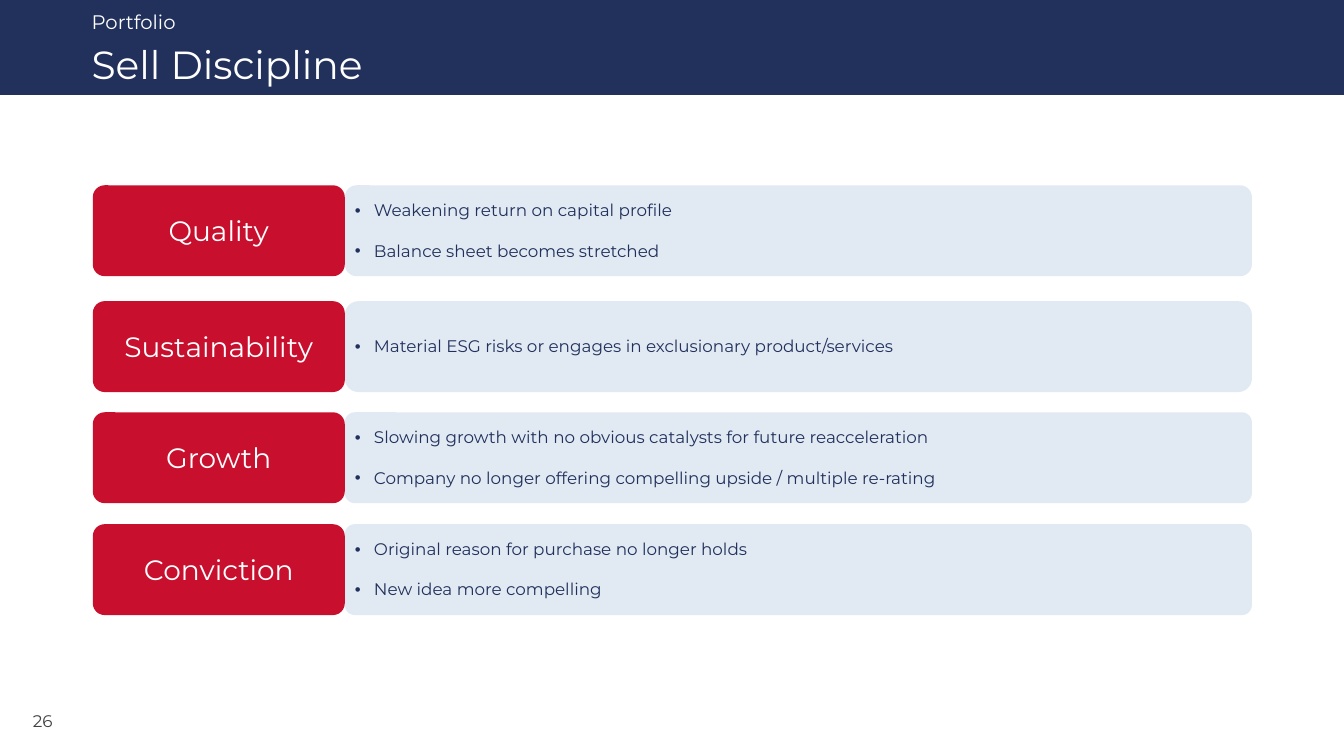
from dataclasses import dataclass

from lxml import etree
from pptx import Presentation
from pptx.dml.color import RGBColor
from pptx.enum import shapes, text
from pptx.oxml import ns
from pptx.slide import Slide
from pptx.shapes.autoshape import Shape
from pptx.util import Cm, Pt

FONT = "Montserrat"
NAVY, RED, PALE_BLUE, WHITE, GREY = "21315C", "C8102E", "9DB9D5", "FFFFFF", "414141"
NO_STYLE_NO_GRID = "{2D5ABB26-0587-4C30-8999-92F81FD0307C}"

# Lengths in centimetres
SLIDE_WIDTH, SLIDE_HEIGHT = 33.87, 19.05
HEADING_LEFT, HEADING_WIDTH = 2.31, 29.87
LABEL_LEFT, LABEL_WIDTH = 2.34, 6.35
PANEL_LEFT, PANEL_WIDTH = 8.69, 22.86
BAND_HEIGHT = 2.29
ROW_HEIGHT = 1.02
BULLET_INDENT = 0.48


@dataclass
class Criterion:
    name: str
    top: float
    table_width: float
    panel_rounding: float
    triggers: list[str]


CRITERIA = [
    Criterion("Quality", 4.67, 14.38, 0.13,
              ["Weakening return on capital profile", "Balance sheet becomes stretched"]),
    Criterion("Sustainability", 7.59, 18.49, 0.15,
              ["Material ESG risks or engages in exclusionary product/services"]),
    Criterion("Growth", 10.39, 18.49, 0.11,
              ["Slowing growth with no obvious catalysts for future reacceleration",
               "Company no longer offering compelling upside / multiple re-rating"]),
    Criterion("Conviction", 13.21, 15.29, 0.11,
              ["Original reason for purchase no longer holds", "New idea more compelling"]),
]


def color(value: str) -> RGBColor:
    return RGBColor.from_string(value)


def format_paragraph(paragraph, size: float, font_color: str, alignment=text.PP_ALIGN.LEFT) -> None:
    paragraph.alignment = alignment
    paragraph.font.name = FONT
    paragraph.font.size = Pt(size)
    paragraph.font.color.rgb = color(font_color)


def add_block(slide: Slide, kind, left: float, top: float, width: float, height: float,
              fill: str) -> Shape:
    block = slide.shapes.add_shape(kind, Cm(left), Cm(top), Cm(width), Cm(height))
    block.shadow.inherit = False
    block.fill.solid()
    block.fill.fore_color.rgb = color(fill)
    block.line.fill.background()
    return block


def set_opacity(shape: Shape, percent: int) -> None:
    fill_color = shape.element.spPr.find(ns.qn("a:solidFill"))[0]
    etree.SubElement(fill_color, ns.qn("a:alpha"), val=str(percent * 1000))


def format_heading(shape: Shape, words: str, size: float, anchor) -> None:
    frame = shape.text_frame
    frame.text = words
    frame.word_wrap = True
    frame.auto_size = text.MSO_AUTO_SIZE.NONE
    frame.vertical_anchor = anchor
    frame.margin_left = frame.margin_top = frame.margin_right = frame.margin_bottom = 0
    format_paragraph(frame.paragraphs[0], size, WHITE)


def add_bullet(paragraph) -> None:
    properties = paragraph._p.get_or_add_pPr()
    properties.set("marL", str(Cm(BULLET_INDENT)))
    properties.set("indent", str(-Cm(BULLET_INDENT)))
    etree.SubElement(properties, ns.qn("a:buFont"), typeface="Arial")
    etree.SubElement(properties, ns.qn("a:buChar"), char="•")


def add_header(slide: Slide) -> None:
    title = slide.shapes.title
    banner = add_block(slide, shapes.MSO_SHAPE.RECTANGLE, 0, 0, SLIDE_WIDTH, 2.39, NAVY)
    title.element.addprevious(banner.element)
    title.left, title.top = Cm(HEADING_LEFT), Cm(0.84)
    title.width, title.height = Cm(HEADING_WIDTH), Cm(1.55)
    format_heading(title, "Sell Discipline", 28, text.MSO_ANCHOR.MIDDLE)
    section = slide.shapes.add_textbox(Cm(HEADING_LEFT), Cm(0.23), Cm(HEADING_WIDTH), Cm(0.61))
    format_heading(section, "Portfolio", 14, text.MSO_ANCHOR.BOTTOM)


def add_trigger_table(slide: Slide, criterion: Criterion) -> None:
    count = len(criterion.triggers)
    height = count * ROW_HEIGHT
    top = criterion.top + (BAND_HEIGHT - height) / 2
    graphic_frame = slide.shapes.add_table(count, 1, Cm(PANEL_LEFT), Cm(top),
                                           Cm(criterion.table_width), Cm(height))
    table = graphic_frame.table
    table.first_row = table.horz_banding = False
    style = next(graphic_frame.element.iter(ns.qn("a:tableStyleId")))
    style.text = NO_STYLE_NO_GRID
    for row, trigger in zip(table.rows, criterion.triggers):
        cell = row.cells[0]
        cell.text = trigger
        cell.fill.background()
        cell.vertical_anchor = text.MSO_ANCHOR.MIDDLE
        paragraph = cell.text_frame.paragraphs[0]
        add_bullet(paragraph)
        format_paragraph(paragraph, 12, NAVY)


def add_criterion(slide: Slide, criterion: Criterion) -> None:
    rounded = shapes.MSO_SHAPE.ROUNDED_RECTANGLE
    panel = add_block(slide, rounded, PANEL_LEFT, criterion.top, PANEL_WIDTH, BAND_HEIGHT, PALE_BLUE)
    panel.adjustments[0] = criterion.panel_rounding
    set_opacity(panel, 30)
    label = add_block(slide, rounded, LABEL_LEFT, criterion.top, LABEL_WIDTH, BAND_HEIGHT, RED)
    label.adjustments[0] = 0.13
    label.text_frame.text = criterion.name
    label.text_frame.vertical_anchor = text.MSO_ANCHOR.MIDDLE
    format_paragraph(label.text_frame.paragraphs[0], 20, WHITE, text.PP_ALIGN.CENTER)
    add_trigger_table(slide, criterion)


def add_page_number(slide: Slide) -> None:
    box = slide.shapes.add_textbox(Cm(0.58), Cm(17.78), Cm(1.68), Cm(1.02))
    box.text_frame.word_wrap = True
    box.text_frame.text = "26"
    format_paragraph(box.text_frame.paragraphs[0], 12, GREY)


def main() -> None:
    presentation = Presentation()
    presentation.slide_width, presentation.slide_height = Cm(SLIDE_WIDTH), Cm(SLIDE_HEIGHT)
    slide = presentation.slides.add_slide(presentation.slide_layouts[5])
    add_header(slide)
    for criterion in CRITERIA:
        add_criterion(slide, criterion)
    add_page_number(slide)
    presentation.save("out.pptx")


if __name__ == "__main__":
    main()
